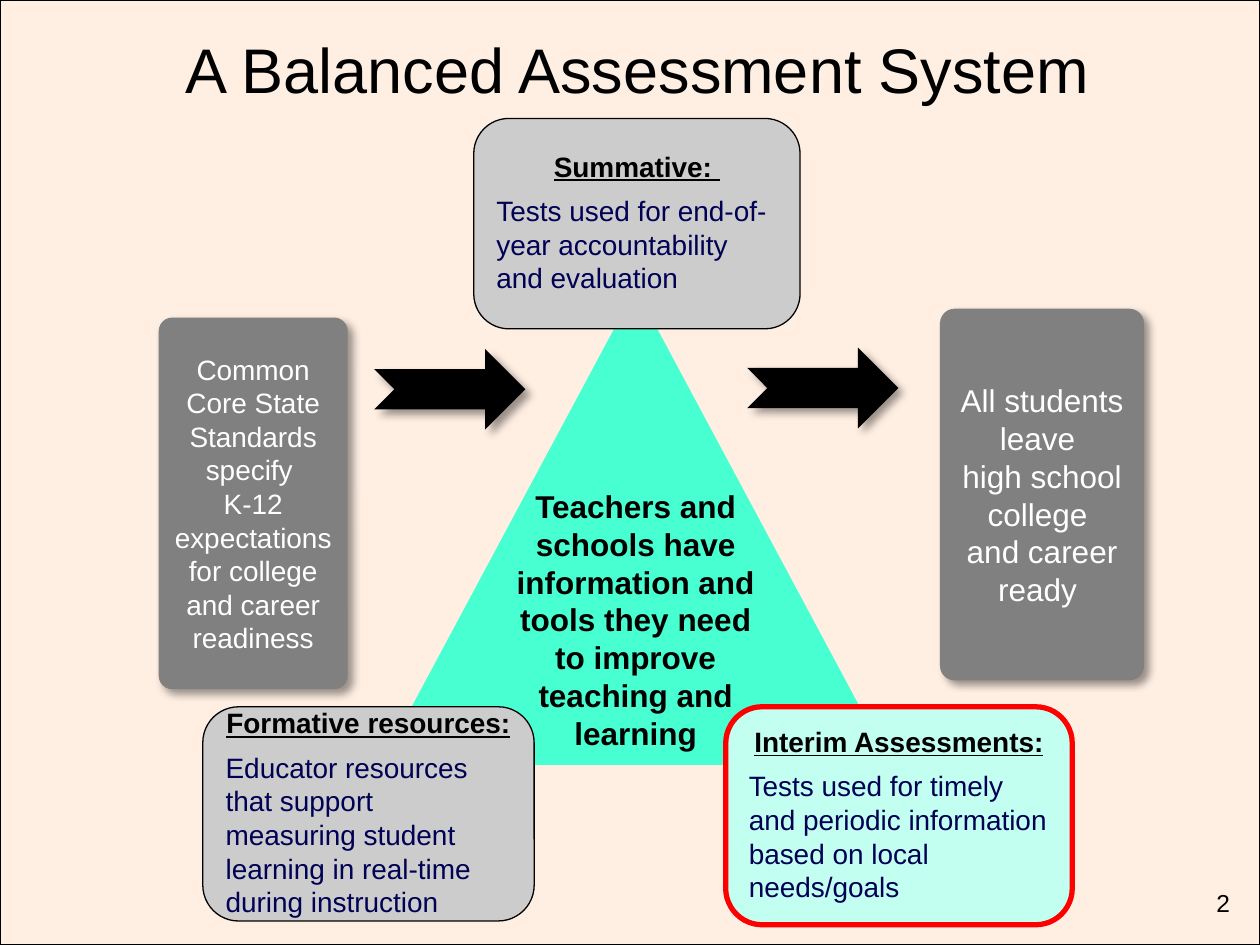
"""Builds the slide on a balanced assessment system."""
from lxml import etree
from pptx import Presentation
from pptx import util as u
from pptx.dml.color import RGBColor
from pptx.enum import shapes, text
from pptx.oxml.ns import qn

THEME = {
    "font": "Arial", "title": 36, "large": 18, "body": 16, "number": 14,
    "page": "FFEFE3", "black": "000000", "white": "FFFFFF", "navy": "000054",
    "dark": "808080", "grey": "CCCCCC", "mint": "C2FFF0", "teal": "47FFD1", "red": "FF0000",
}
KIND = shapes.MSO_SHAPE
ALIGN = text.PP_ALIGN

TITLE = ("A Balanced Assessment System", (1.02, 0.21, 8.08, 0.67), "title", ALIGN.CENTER)
NUMBER = ("2", (8.03, 7, 1.83, 0.5), "number", ALIGN.RIGHT)
PANELS = [
    (["Common Core State Standards specify ",
      "K-12 expectations for college and career readiness"],
     (1.26, 2.52, 1.5, 2.95), "body", 0.05),
    (["All students leave \vhigh school college \vand career ready "],
     (7.46, 2.45, 1.62, 2.95), "large", 0.1),
]
ARROWS = [(2.97, 2.77, 1.2, 0.64), (5.93, 2.76, 1.2, 0.64)]
CENTRE = ("Teachers and schools have information and tools they need "
          "to improve teaching and learning")
CARDS = [
    ("Summative: ", "Tests used for end-of-year accountability and evaluation",
     (3.76, 0.94, 2.59, 1.67), "grey", "black", 0.75),
    ("Interim Assessments:",
     "Tests used for timely and periodic information based on local needs/goals",
     (5.76, 5.61, 2.75, 1.73), "mint", "red", 3),
    ("Formative resources:",
     "Educator resources that support measuring student learning in real-time during instruction",
     (1.61, 5.61, 2.63, 1.7), "grey", "black", 0.75),
]


def color(name):
    return RGBColor.from_string(THEME[name])


def add_shape(slide, kind, place, fill, line=None, width=0.75, corner=None):
    shape = slide.shapes.add_shape(kind, *map(u.Inches, place))
    shape.shadow.inherit = False
    shape.fill.solid()
    shape.fill.fore_color.rgb = color(fill)
    if line:
        shape.line.color.rgb = color(line)
        shape.line.width = u.Pt(width)
    else:
        shape.line.fill.background()
    if corner:
        shape.adjustments[0] = corner
    return shape


def cast_shadow(shape):
    effects = shape._element.spPr.find(qn("a:effectLst"))
    shadow = etree.SubElement(effects, qn("a:outerShdw"), blurRad=str(u.Pt(5)),
                              dist=str(u.Pt(4)), dir=str(45 * 60000), rotWithShape="0")
    tint = etree.SubElement(shadow, qn("a:srgbClr"), val=THEME["black"])
    etree.SubElement(tint, qn("a:alpha"), val="40000")


def write(shape, paragraphs, size, ink, align=ALIGN.CENTER, bold=False,
          anchor=text.MSO_ANCHOR.MIDDLE):
    frame = shape.text_frame
    frame.word_wrap = True
    frame.vertical_anchor = anchor
    frame.text = "\n".join(paragraphs)
    for paragraph in frame.paragraphs:
        paragraph.alignment = align
        font = paragraph.font
        font.name, font.size, font.bold = THEME["font"], u.Pt(THEME[size]), bold
        font.color.rgb = color(ink)
    return frame


def set_margins(frame, side, bottom):
    frame.margin_left = frame.margin_right = frame.margin_top = u.Inches(side)
    frame.margin_bottom = u.Inches(bottom)


def add_label(slide, words, place, size, align, anchor):
    box = slide.shapes.add_textbox(*map(u.Inches, place))
    write(box, [words], size, "black", align, anchor=anchor)


def add_card(slide, heading, body, place, fill, line, width):
    card = add_shape(slide, KIND.ROUNDED_RECTANGLE, place, fill, line, width, 0.167)
    frame = write(card, [heading, body], "body", "navy", ALIGN.LEFT)
    first = frame.paragraphs[0]
    first.alignment = ALIGN.CENTER
    first.line_spacing = 0.9
    first.space_after = u.Pt(6)
    first.font.bold = first.font.underline = True
    first.font.color.rgb = color("black")


def main():
    presentation = Presentation()
    presentation.slide_width, presentation.slide_height = u.Inches(10), u.Inches(7.5)
    slide = presentation.slides.add_slide(presentation.slide_layouts[6])
    add_shape(slide, KIND.RECTANGLE, (0, 0, 10, 7.5), "page", "black")
    add_label(slide, *TITLE, text.MSO_ANCHOR.MIDDLE)
    for paragraphs, place, size, margin in PANELS:
        panel = add_shape(slide, KIND.ROUNDED_RECTANGLE, place, "dark", corner=0.072)
        cast_shadow(panel)
        frame = write(panel, paragraphs, size, "white")
        set_margins(frame, margin, margin)
    for place in ARROWS:
        cast_shadow(add_shape(slide, KIND.NOTCHED_RIGHT_ARROW, place, "black"))
    triangle = add_shape(slide, KIND.ISOSCELES_TRIANGLE, (3.02, 2.29, 4.05, 3.78), "teal")
    set_margins(write(triangle, [CENTRE], "large", "black", bold=True), 0, 0.42)
    add_label(slide, *NUMBER, text.MSO_ANCHOR.TOP)
    for card in CARDS:
        add_card(slide, *card)
    presentation.save("out.pptx")


if __name__ == "__main__":
    main()
